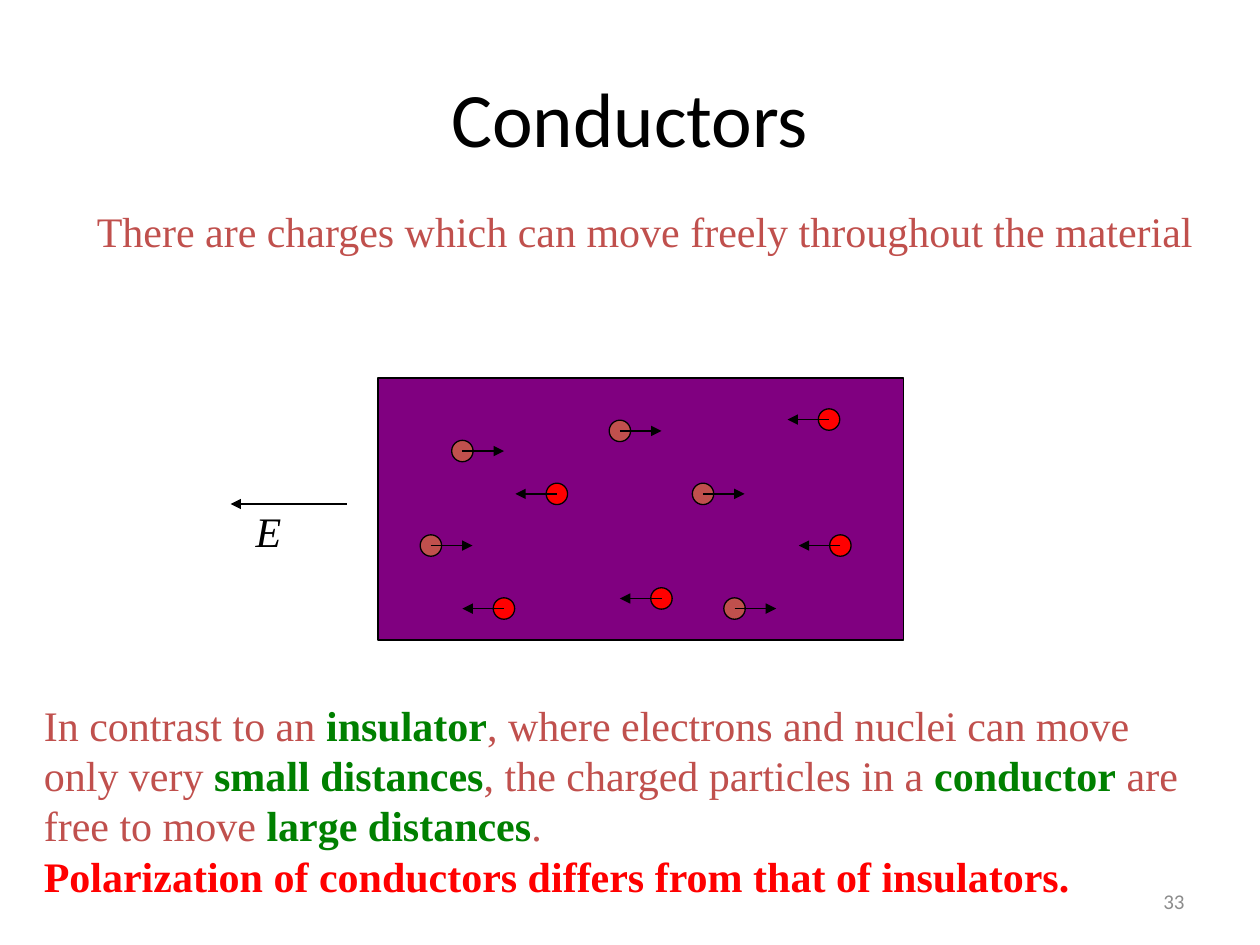
from dataclasses import dataclass

from lxml.etree import SubElement
from pptx import Presentation
from pptx.dml.color import RGBColor
from pptx.enum.shapes import MSO_CONNECTOR, MSO_SHAPE
from pptx.enum.text import MSO_ANCHOR, PP_ALIGN
from pptx.oxml.ns import qn
from pptx.util import Inches, Pt


@dataclass(frozen=True)
class Theme:
    black: str = "000000"
    brick: str = "C0504D"
    red: str = "FF0000"
    green: str = "008000"
    purple: str = "800080"
    grey: str = "8C8C8C"
    heading_font: str = "Calibri"
    body_font: str = "Times New Roman"
    title_size: int = 44
    body_size: int = 24
    number_size: int = 12
    line_width: float = 0.75


class SlideBuilder:
    def __init__(self, page, theme):
        self.page = page
        self.theme = theme

    def add_span(self, para, text, color, size=None, font=None, bold=False, italic=False):
        span = para.add_run()
        span.text = text
        span.font.name = font or self.theme.body_font
        span.font.size = Pt(size or self.theme.body_size)
        span.font.color.rgb = RGBColor.from_string(color)
        span.font.bold = bold
        span.font.italic = italic

    def add_title(self, text, left, top, width, height):
        title = self.page.shapes.title
        title.left, title.top = Inches(left), Inches(top)
        title.width, title.height = Inches(width), Inches(height)
        title.text_frame.vertical_anchor = MSO_ANCHOR.MIDDLE
        para = title.text_frame.paragraphs[0]
        para.alignment = PP_ALIGN.CENTER
        self.add_span(para, text, self.theme.black, self.theme.title_size, self.theme.heading_font)

    def add_text(self, left, top, width, height, wrap=True):
        """Return the text frame of a new empty text box."""
        box = self.page.shapes.add_textbox(
            Inches(left), Inches(top), Inches(width), Inches(height))
        box.text_frame.word_wrap = wrap
        return box.text_frame

    def add_shape(self, kind, left, top, width, height, fill):
        shape = self.page.shapes.add_shape(
            kind, Inches(left), Inches(top), Inches(width), Inches(height))
        shape.shadow.inherit = False
        shape.fill.solid()
        shape.fill.fore_color.rgb = RGBColor.from_string(fill)
        shape.line.color.rgb = RGBColor.from_string(self.theme.black)
        shape.line.width = Pt(self.theme.line_width)

    def add_arrow(self, shapes, start, end, y):
        """Add a horizontal arrow to the given slide or group shapes."""
        arrow = shapes.add_connector(
            MSO_CONNECTOR.STRAIGHT, Inches(start), Inches(y), Inches(end), Inches(y))
        arrow.line.color.rgb = RGBColor.from_string(self.theme.black)
        arrow.line.width = Pt(self.theme.line_width)
        SubElement(arrow.line._get_or_add_ln(), qn("a:tailEnd"), type="triangle")
        SubElement(arrow._element.spPr, qn("a:effectLst"))

    def add_charges(self, centers, color, travel):
        """Draw charges and a group of arrows showing how far they travel."""
        diameter = 0.17
        for x, y in centers:
            self.add_shape(MSO_SHAPE.OVAL, x - diameter / 2, y - diameter / 2,
                           diameter, diameter, color)
        arrows = self.page.shapes.add_group_shape()
        for x, y in centers:
            self.add_arrow(arrows.shapes, x, x + travel, y)


def main():
    deck = Presentation()
    deck.slide_width, deck.slide_height = Inches(10), Inches(7.5)
    theme = Theme()
    page = deck.slides.add_slide(deck.slide_layouts[5])
    builder = SlideBuilder(page, theme)

    builder.add_title("Conductors", 0.5, 0.3, 9, 1.25)
    intro = builder.add_text(0.67, 1.58, 8.91, 0.5, wrap=False)
    builder.add_span(intro.paragraphs[0],
                     "There are charges which can move freely throughout the material",
                     theme.brick)

    builder.add_shape(MSO_SHAPE.RECTANGLE, 3, 3, 4.17, 2.08, theme.purple)
    right_moving = [(5.58, 3.92), (4.92, 3.42), (5.83, 4.83), (3.42, 4.33), (3.67, 3.58)]
    left_moving = [(6.58, 3.33), (4, 4.83), (4.42, 3.92), (6.67, 4.33), (5.25, 4.75)]
    builder.add_charges(right_moving, theme.brick, 0.33)
    builder.add_charges(left_moving, theme.red, -0.33)

    builder.add_arrow(page.shapes, 2.75, 1.83, 4)
    field = builder.add_text(1.93, 3.96, 0.4, 0.5, wrap=False)
    builder.add_span(field.paragraphs[0], "E", theme.black, italic=True)

    summary = builder.add_text(0.25, 5.5, 9.33, 1.7)
    contrast = [
        ("In contrast to an ", "insulator"),
        (", where electrons and nuclei can move only very ", "small distances"),
        (", the charged particles in a ", "conductor"),
        (" are free to move ", "large distances"),
    ]
    para = summary.paragraphs[0]
    for plain, key_term in contrast:
        builder.add_span(para, plain, theme.brick)
        builder.add_span(para, key_term, theme.green, bold=True)
    builder.add_span(para, ".", theme.brick)
    builder.add_span(summary.add_paragraph(),
                     "Polarization of conductors differs from that of insulators.",
                     theme.red, bold=True)

    number = builder.add_text(7.17, 6.95, 2.33, 0.4)
    number.vertical_anchor = MSO_ANCHOR.MIDDLE
    number.paragraphs[0].alignment = PP_ALIGN.RIGHT
    builder.add_span(number.paragraphs[0], "33", theme.grey,
                     theme.number_size, theme.heading_font)

    deck.save("out.pptx")


if __name__ == "__main__":
    main()
